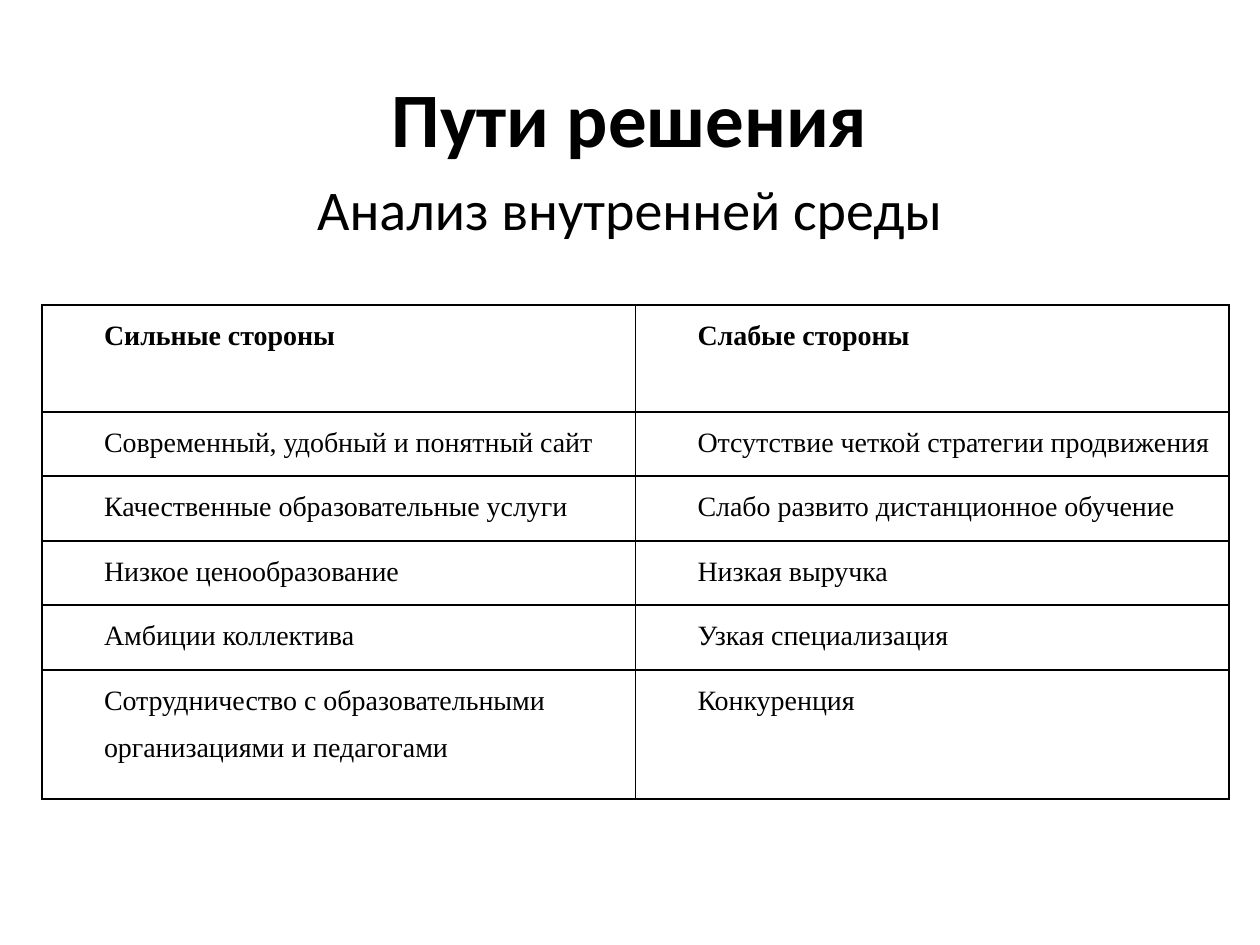
from lxml.etree import SubElement
from pptx import Presentation
from pptx.dml.color import RGBColor as RGB
from pptx.enum.text import MSO_ANCHOR as Anchor, PP_ALIGN as Align
from pptx.oxml.ns import qn
from pptx.util import Pt

SCALE = 914400 / 126  # EMU in one px
COLORS = {"ink": "000000"}

HEAD = ("Сильные стороны", "Слабые стороны")
ROWS = [
    HEAD,
    ("Современный, удобный и понятный сайт",
     "Отсутствие четкой стратегии продвижения"),
    ("Качественные образовательные услуги",
     "Слабо развито дистанционное обучение"),
    ("Низкое ценообразование", "Низкая выручка"),
    ("Амбиции коллектива", "Узкая специализация"),
    ("Сотрудничество с образовательными организациями и педагогами",
     "Конкуренция"),
]
HEIGHTS = [107, 64, 65, 64, 65, 129]
WRAPPED = ROWS[-1][0]  # its lines share one left indent


def px(n):
    return round(n * SCALE)


class Deck:
    main, grid = "Calibri", "Times New Roman"

    def __init__(self, wide, high):
        self.prs = Presentation()
        self.prs.slide_width, self.prs.slide_height = px(wide), px(high)
        self.slide = self.prs.slides.add_slide(self.prs.slide_layouts[1])

    def style(self, para, face, size, bold=False, align=Align.CENTER):
        para.alignment = align
        font = para.font
        font.name, font.size, font.bold = face, Pt(size), bold
        font.color.rgb = RGB.from_string(COLORS["ink"])

    def holder(self, index, text, box, size, anchor, bold=False):
        shape = self.slide.placeholders[index]
        shape.left, shape.top, shape.width, shape.height = map(px, box)
        frame = shape.text_frame
        frame.text, frame.vertical_anchor = text, anchor
        para = frame.paragraphs[0]
        self.style(para, self.main, size, bold)
        SubElement(para._p.get_or_add_pPr(), qn("a:buNone"))

    def border(self, cell):
        props = cell._tc.get_or_add_tcPr()
        for side in ("lnL", "lnR", "lnT", "lnB"):
            line = SubElement(props, qn(f"a:{side}"), w=str(Pt(1)))
            fill = SubElement(line, qn("a:solidFill"))
            SubElement(fill, qn("a:srgbClr"), val=COLORS["ink"])

    def cell(self, cell, text):
        cell.margin_left = cell.margin_right = 0
        cell.margin_top = cell.margin_bottom = 0
        self.border(cell)
        cell.fill.background()
        cell.text = text
        para = cell.text_frame.paragraphs[0]
        wrap = text == WRAPPED
        self.style(para, self.grid, 16, text in HEAD,
                   Align.LEFT if wrap else Align.JUSTIFY)
        para.line_spacing = 1.5
        left, first = (62, 0) if wrap else (0, 62)
        props = para._p.get_or_add_pPr()
        props.set("marL", str(px(left)))
        props.set("indent", str(px(first)))

    def table(self, rows, heights, left, top, wide):
        count = len(rows[0])
        table = self.slide.shapes.add_table(
            len(rows), count, px(left), px(top), px(wide), px(sum(heights))
        ).table
        table.first_row = table.horz_banding = False
        for col in table.columns:
            col.width = px(wide / count)
        for row, high, texts in zip(table.rows, heights, rows):
            row.height = px(high)
            for cell, text in zip(row.cells, texts):
                self.cell(cell, text)

    def save(self):
        self.prs.save("out.pptx")


def main():
    deck = Deck(1260, 945)
    # Title and subtitle
    deck.holder(0, "Пути решения", (63, 38, 1134, 157), 44,
                Anchor.MIDDLE, bold=True)
    deck.holder(1, "Анализ внутренней среды", (63, 168, 1134, 677), 32,
                Anchor.TOP)
    # Strengths and weaknesses
    deck.table(ROWS, HEIGHTS, 42, 305, 1187)
    deck.save()


if __name__ == "__main__":
    main()
